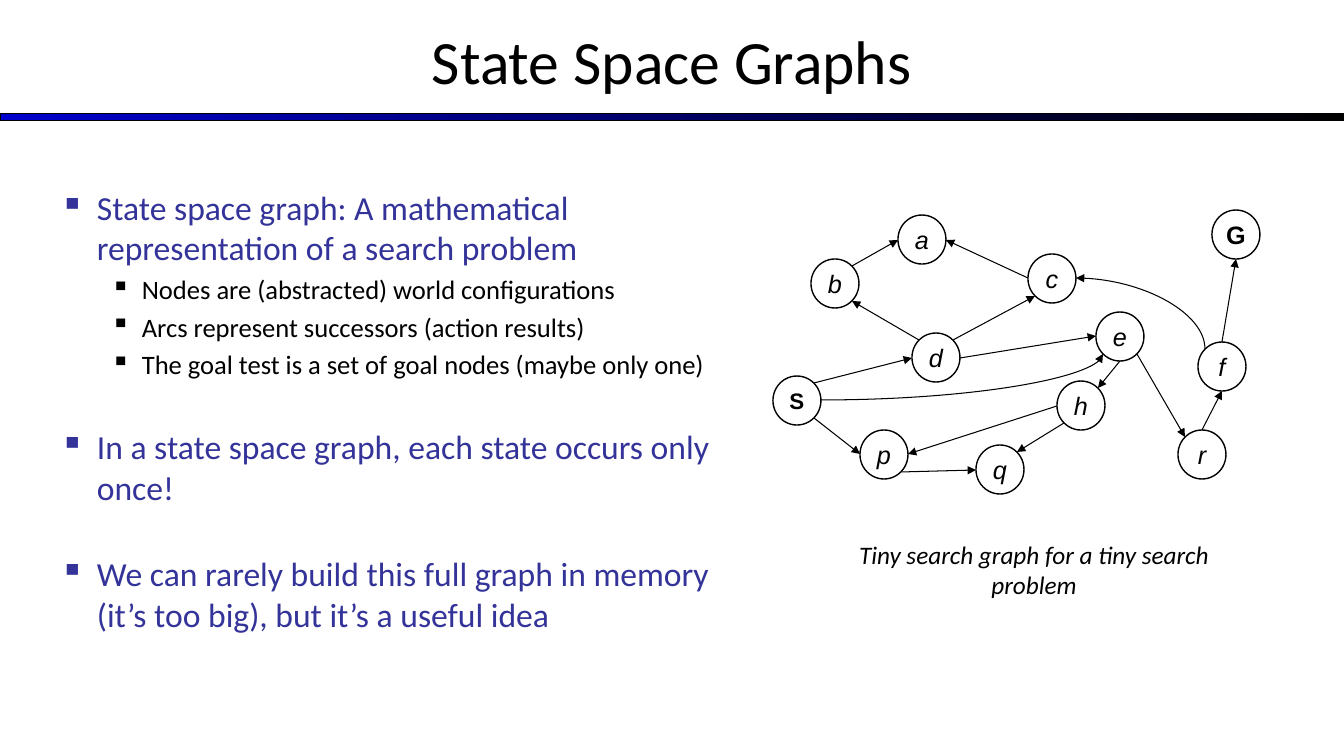
from lxml import etree
from pptx import Presentation
from pptx.dml.color import RGBColor
from pptx.enum.shapes import MSO_CONNECTOR, MSO_SHAPE
from pptx.enum.text import MSO_ANCHOR, PP_ALIGN
from pptx.oxml.ns import qn
from pptx.util import Emu, Pt

STRAIGHT, CURVE = MSO_CONNECTOR.STRAIGHT, MSO_CONNECTOR.CURVE
RECTANGLE, NODE = MSO_SHAPE.RECTANGLE, MSO_SHAPE.FLOWCHART_CONNECTOR
TOP, MIDDLE = MSO_ANCHOR.TOP, MSO_ANCHOR.MIDDLE
LEFT, CENTER = PP_ALIGN.LEFT, PP_ALIGN.CENTER

PX = 914400 / 100.8
SLIDE_SIZE = (1344, 756)
COLORS = {"ink": "000000", "bar": "0000CC", "point": "333399"}

# Format of each outline level: size, colour, left margin and hanging indent
LEVELS = [
    {"size": 24, "color": "point", "margin": 37, "hang": 37},
    {"size": 19, "color": "ink", "margin": 82, "hang": 31},
]
# Level, space before in points, text
OUTLINE = [
    (0, 0, "State space graph: A mathematical representation of a search problem"),
    (1, 4, "Nodes are (abstracted) world configurations"),
    (1, 4, "Arcs represent successors (action results)"),
    (1, 4, "The goal test is a set of goal nodes (maybe only one)"),
    (0, 33, "In a state space graph, each state occurs only once!"),
    (0, 33, "We can rarely build this full graph in memory (it’s too big), "
            "but it’s a useful idea"),
]

NODE_WIDTH, NODE_HEIGHT = 48, 49
NODES = {
    "S": (773, 376), "G": (1212, 210), "d": (912, 333), "b": (811, 259),
    "p": (860, 430), "q": (976, 445), "c": (1028, 254), "e": (1096, 312),
    "h": (1057, 381), "a": (898, 215), "f": (1198, 342), "r": (1178, 430),
}
NODE_FORMATS = {
    "S": {"size": 16, "bold": True},
    "G": {"size": 18, "bold": True},
}
# Each end is a node and the compass side where the arc touches it
ARCS = [
    ("S se", "p w"), ("p se", "q w"), ("h sw", "q ne"), ("h w", "p e"),
    ("e s", "h ne"), ("e se", "r nw"), ("r n", "f s"), ("f n", "G s"),
    ("S ne", "d w"), ("d nw", "b se"), ("b ne", "a w"), ("c w", "a e"),
    ("d ne", "c sw"), ("d e", "e w"),
]


def px(length):
    return Emu(round(length * PX))


def rgb(name):
    return RGBColor.from_string(COLORS[name])


def touch_point(end):
    """Return the point on a node's outline, such as "S se"."""
    name, side = end.split()
    left, top = NODES[name]
    across = ("e" in side) - ("w" in side)
    down = ("s" in side) - ("n" in side)
    reach = 0.71 if across and down else 1
    return (round(left + NODE_WIDTH / 2 * (1 + across * reach)),
            round(top + NODE_HEIGHT / 2 * (1 + down * reach)))


def write(para, text, size=18, font="Calibri", color="ink", bold=False,
          italic=False, align=LEFT, before=0):
    para.alignment = align
    para.space_before = Pt(before)
    span = para.add_run()
    span.text = text
    span.font.name = font
    span.font.size = Pt(size)
    span.font.bold = bold
    span.font.italic = italic
    span.font.color.rgb = rgb(color)


def add_bullet(para, color, margin, hang):
    props = para._p.get_or_add_pPr()
    props.set("marL", str(px(margin)))
    props.set("indent", str(-px(hang)))
    tint = etree.SubElement(props, qn("a:buClr"))
    etree.SubElement(tint, qn("a:srgbClr")).set("val", COLORS[color])
    etree.SubElement(props, qn("a:buChar")).set("char", "▪")


class GraphSlide:
    def __init__(self, deck):
        self.page = deck.slides.add_slide(deck.slide_layouts[6])
        self.ink = rgb("ink")

    def shape(self, kind, left, top, width, height, line):
        shape = self.page.shapes.add_shape(
            kind, px(left), px(top), px(width), px(height))
        shape.shadow.inherit = False
        shape.line.color.rgb = self.ink
        shape.line.width = Pt(line)
        return shape

    def bar(self, left, top, width, height):
        fill = self.shape(RECTANGLE, left, top, width, height, 0.75).fill
        fill.gradient()
        fill.gradient_angle = 0
        for stop, color in zip(fill.gradient_stops, ("bar", "ink")):
            stop.color.rgb = rgb(color)

    def text_box(self, left, top, width, height, anchor=TOP):
        box = self.page.shapes.add_textbox(
            px(left), px(top), px(width), px(height))
        frame = box.text_frame
        frame.word_wrap = True
        frame.vertical_anchor = anchor
        return frame

    def outline(self, left, top, width, height):
        frame = self.text_box(left, top, width, height)
        for index, (level, before, text) in enumerate(OUTLINE):
            para = frame.add_paragraph() if index else frame.paragraphs[0]
            style = LEVELS[level]
            para.level = level
            para.space_before = Pt(before)
            add_bullet(para, style["color"], style["margin"], style["hang"])
            write(para, text, size=style["size"], color=style["color"],
                  before=before)

    def node(self, name):
        node = self.shape(NODE, *NODES[name], NODE_WIDTH, NODE_HEIGHT, 1)
        node.fill.background()
        frame = node.text_frame
        frame.word_wrap = False
        frame.vertical_anchor = MIDDLE
        style = NODE_FORMATS.get(name, {"italic": True})
        write(frame.paragraphs[0], name, font="Arial", align=CENTER, **style)

    def arc(self, start, end, kind=STRAIGHT, arrow="a:tailEnd"):
        points = [px(value) for value in touch_point(start) + touch_point(end)]
        arc = self.page.shapes.add_connector(kind, *points)
        arc.line.color.rgb = self.ink
        arc.line.width = Pt(0.75)
        tip = etree.SubElement(arc.line._get_or_add_ln(), qn(arrow))
        tip.set("type", "triangle")
        props = arc._element.spPr
        etree.SubElement(props, qn("a:effectLst"))
        if kind == CURVE:
            props.find(qn("a:prstGeom")).set("prst", "curvedConnector2")


def main():
    deck = Presentation()
    deck.slide_width, deck.slide_height = (px(side) for side in SLIDE_SIZE)
    slide = GraphSlide(deck)

    slide.bar(0, 114, 1344, 7)
    title = slide.text_box(0, -3, 1344, 126, anchor=MIDDLE)
    write(title.paragraphs[0], "State Space Graphs", size=44, align=CENTER)
    slide.outline(50, 182, 698, 499)

    for name in NODES:
        slide.node(name)
    for start, end in ARCS:
        slide.arc(start, end)
    # A curve leaves level and arrives upright, so f to c is drawn from c
    slide.arc("c e", "f nw", CURVE, arrow="a:headEnd")
    slide.arc("S e", "e sw", CURVE)

    caption = slide.text_box(849, 534, 370, 72)
    write(caption.paragraphs[0], "Tiny search graph for a tiny search problem",
          italic=True, align=CENTER)
    deck.save("out.pptx")


if __name__ == "__main__":
    main()
